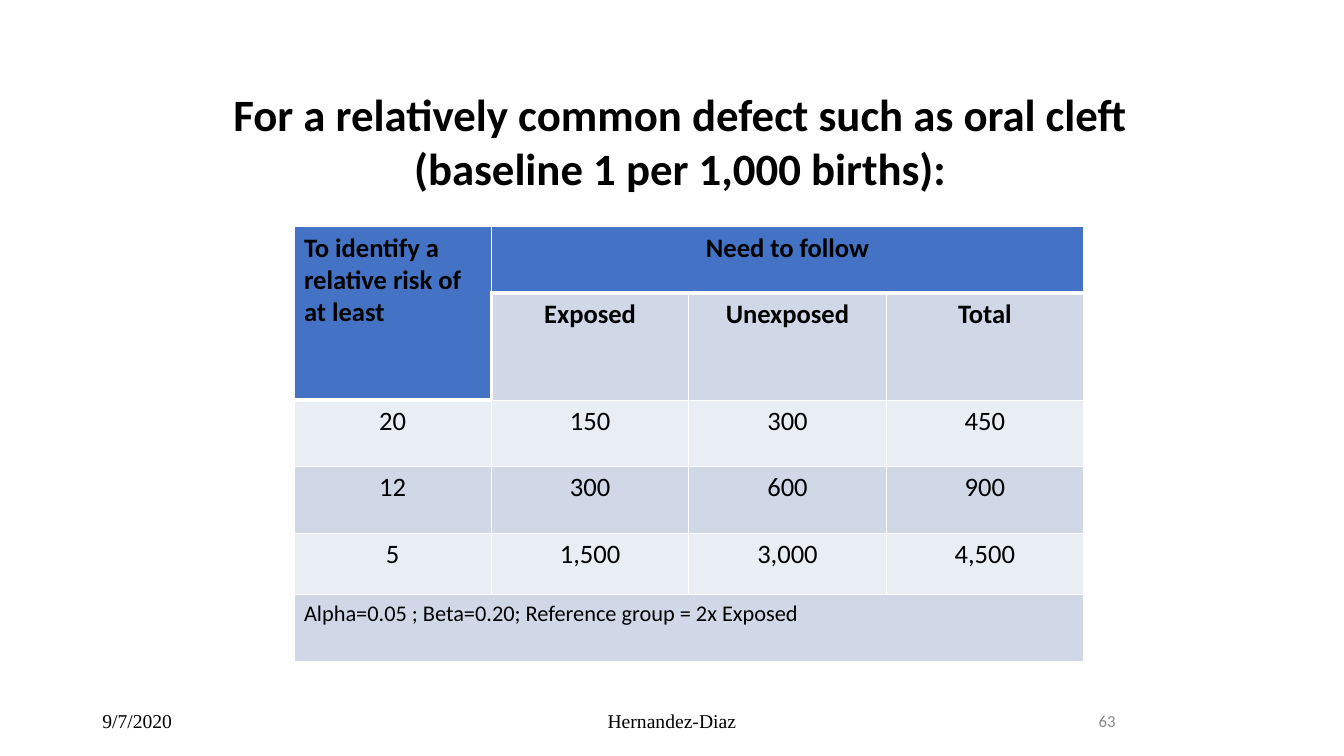
from lxml import etree
from pptx import Presentation
from pptx.dml.color import RGBColor
from pptx.enum.text import MSO_ANCHOR, MSO_AUTO_SIZE, PP_ALIGN
from pptx.oxml.ns import qn
from pptx.util import Pt

LEFT, MID, RIGHT = PP_ALIGN.LEFT, PP_ALIGN.CENTER, PP_ALIGN.RIGHT
CENTER = MSO_ANCHOR.MIDDLE
FIXED = MSO_AUTO_SIZE.NONE

BLACK = RGBColor(0x00, 0x00, 0x00)
WHITE = RGBColor(0xFF, 0xFF, 0xFF)
GREY = RGBColor(0x89, 0x89, 0x89)
BLUE = RGBColor(0x44, 0x72, 0xC4)
DARK = RGBColor(0xD0, 0xD8, 0xE8)
LIGHT = RGBColor(0xE9, 0xED, 0xF4)

SANS, SERIF = "Calibri", "Times New Roman"

TITLE = ["For a relatively common defect such as oral cleft",
         "(baseline 1 per 1,000 births):"]
ROWS = [
    ["To identify a relative risk of at least", "Need to follow", "", ""],
    ["", "Exposed", "Unexposed", "Total"],
    ["20", "150", "300", "450"],
    ["12", "300", "600", "900"],
    ["5", "1,500", "3,000", "4,500"],
    ["Alpha=0.05 ; Beta=0.20; Reference group = 2x Exposed", "", "", ""],
]
HEIGHTS = [47.52, 47.52, 47.52, 47.52, 43.92, 47.52]


def add_run(para, text, size, font=SANS, color=BLACK, bold=False):
    run = para.add_run()
    run.text = text
    run.font.name = font
    run.font.size = Pt(size)
    run.font.bold = bold
    run.font.color.rgb = color


def add_title(slide, x, y, w, h):
    shape = slide.shapes.title
    shape.left, shape.top, shape.width, shape.height = Pt(x), Pt(y), Pt(w), Pt(h)
    frame = shape.text_frame
    frame.word_wrap = True
    frame.auto_size = FIXED
    frame.vertical_anchor = CENTER
    frame.margin_top = Pt(31)
    para = frame.paragraphs[0]
    para.alignment = MID
    for i, line in enumerate(TITLE):
        if i:
            para.add_line_break()
        add_run(para, line, 32, bold=True)


def set_edge(cell, side, width):
    line = etree.SubElement(cell._tc.get_or_add_tcPr(), qn(f"a:ln{side}"),
                            w=str(Pt(width)))
    fill = etree.SubElement(line, qn("a:solidFill"))
    etree.SubElement(fill, qn("a:srgbClr"), val=str(WHITE))


def edge_width(row, col, side):
    # The heading cells are set off by a thick rule
    last = 1 if col == 0 else 0
    thick = ((side == "B" and row == last)
             or (side == "T" and row == last + 1)
             or (side == "L" and (row, col) == (1, 1)))
    return 3 if thick else 1


def add_grid(slide, x, y, w, h):
    table = slide.shapes.add_table(len(ROWS), len(ROWS[0]),
                                   Pt(x), Pt(y), Pt(w), Pt(h)).table
    for col in table.columns:
        col.width = Pt(w / len(ROWS[0]))
    for row, high in zip(table.rows, HEIGHTS):
        row.height = Pt(high)

    # Merged headings and footnote
    table.cell(0, 0).merge(table.cell(1, 0))
    table.cell(0, 1).merge(table.cell(0, 3))
    table.cell(5, 0).merge(table.cell(5, 3))

    for r, texts in enumerate(ROWS):
        for c, text in enumerate(texts):
            cell = table.cell(r, c)
            for side in "LRTB":
                set_edge(cell, side, edge_width(r, c, side))
            head = r == 0 or (r, c) == (1, 0)
            cell.fill.solid()
            cell.fill.fore_color.rgb = BLUE if head else DARK if r % 2 else LIGHT
            if text:
                para = cell.text_frame.paragraphs[0]
                para.alignment = LEFT if c == 0 and r in (0, 5) else MID
                add_run(para, text, 16 if r == 5 else 19, bold=r < 2)


def add_note(slide, x, y, w, h, text, align, size, font, color):
    frame = slide.shapes.add_textbox(Pt(x), Pt(y), Pt(w), Pt(h)).text_frame
    frame.word_wrap = True
    frame.vertical_anchor = CENTER
    para = frame.paragraphs[0]
    para.alignment = align
    add_run(para, text, size, font, color)


def add_footer(slide, x, y, w, h):
    add_note(slide, x, y, 216, h, "9/7/2020", LEFT, 14, SERIF, BLACK)
    add_note(slide, x + 252, y, 324, h, "Hernandez-Diaz", MID, 14, SERIF, BLACK)
    add_note(slide, x + w - 168, y, 168, h, "63", RIGHT, 12, SANS, GREY)


def main():
    deck = Presentation()
    deck.slide_width, deck.slide_height = Pt(960), Pt(540)
    slide = deck.slides.add_slide(deck.slide_layouts[5])
    add_title(slide, 155.5, 41.8, 661, 90)
    add_grid(slide, 210, 162, 564, sum(HEIGHTS))
    add_footer(slide, 66, 500.5, 738, 28.8)
    deck.save("out.pptx")


if __name__ == "__main__":
    main()
